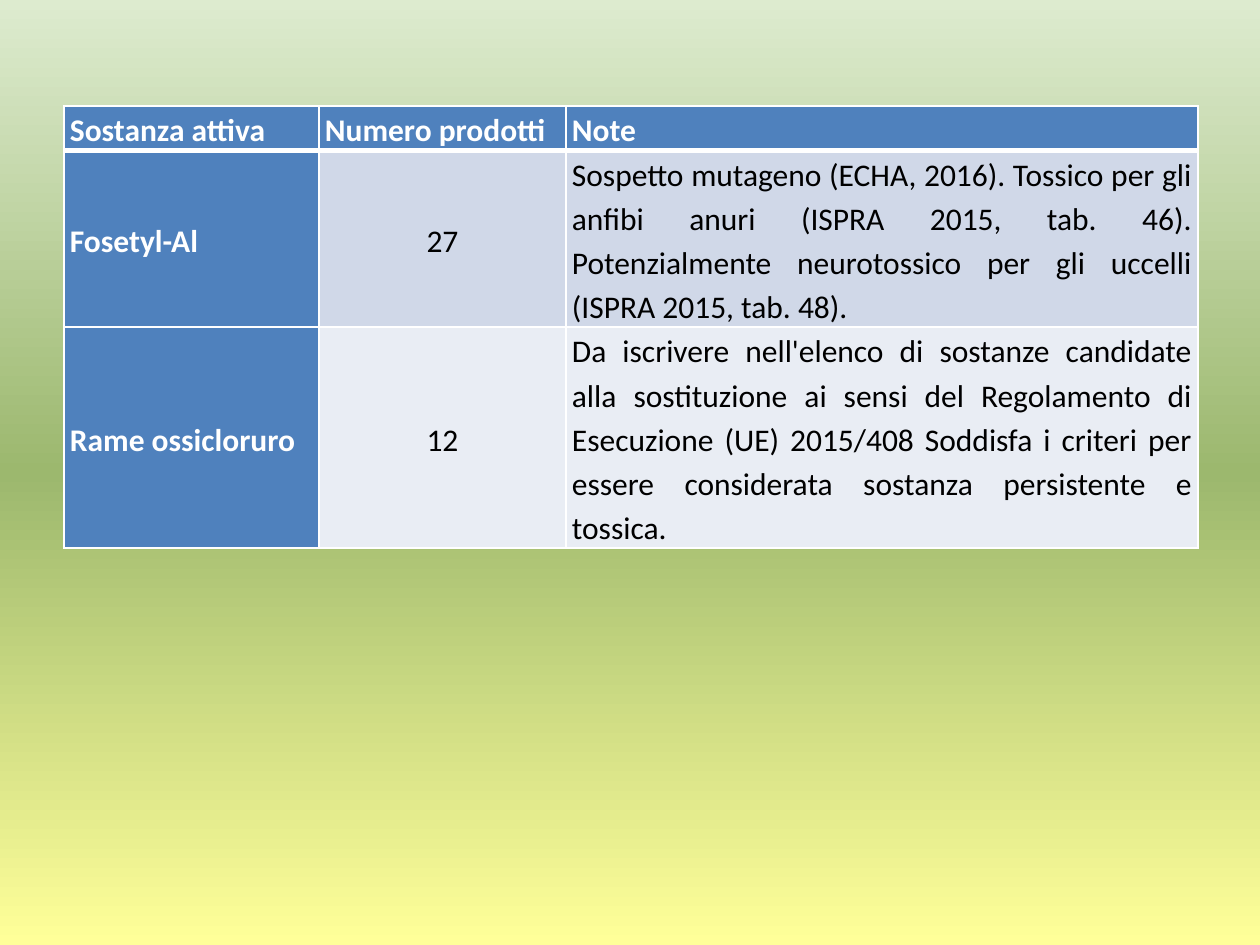
from copy import deepcopy

from lxml.etree import SubElement
from pptx import Presentation
from pptx.dml.color import RGBColor
from pptx.enum.text import MSO_ANCHOR as Anchor, PP_ALIGN as Align
from pptx.oxml.ns import qn
from pptx.util import Emu, Pt

PX = 914400 / 126
WHITE = RGBColor(0xFF, 0xFF, 0xFF)
BLACK = RGBColor(0x00, 0x00, 0x00)
BLUE = RGBColor(0x4F, 0x81, 0xBD)
BANDS = [RGBColor(0xD0, 0xD8, 0xE8), RGBColor(0xE9, 0xED, 0xF4)]
PALE_GREEN = RGBColor(0xDD, 0xEB, 0xCF)
GREEN = RGBColor(0x9C, 0xB8, 0x6E)
YELLOW = RGBColor(0xFF, 0xFF, 0x99)

COLUMN_WIDTHS = [255, 247, 632]
ROW_HEIGHTS = [43, 174, 217]
SUBSTANCES = [
    ["Sostanza attiva", "Numero prodotti", "Note"],
    ["Fosetyl-Al", "27",
     "Sospetto mutageno (ECHA, 2016). Tossico per gli anfibi anuri "
     "(ISPRA 2015, tab. 46). Potenzialmente neurotossico per gli uccelli "
     "(ISPRA 2015, tab. 48)."],
    ["Rame ossicloruro", "12",
     "Da iscrivere nell'elenco di sostanze candidate alla sostituzione ai "
     "sensi del Regolamento di Esecuzione (UE) 2015/408 Soddisfa i criteri "
     "per essere considerata sostanza persistente e tossica."],
]


def px(length):
    return Emu(round(length * PX))


def write(frame, text, size=18, color=BLACK, bold=False, align=Align.JUSTIFY):
    paragraph = frame.paragraphs[0]
    paragraph.alignment = align
    paragraph.line_spacing = 1.15
    run = paragraph.add_run()
    run.text = text
    run.font.name = "Calibri"
    run.font.size = Pt(size)
    run.font.bold = bold
    run.font.color.rgb = color


def set_borders(cell, bottom_width):
    """Draw white cell borders; they must precede the fill in the XML."""
    properties = cell._tc.get_or_add_tcPr()
    for side, width in [("L", 1), ("R", 1), ("T", 1), ("B", bottom_width)]:
        line = SubElement(properties, qn(f"a:ln{side}"), w=str(Pt(width)))
        solid = SubElement(line, qn("a:solidFill"))
        SubElement(solid, qn("a:srgbClr"), val=str(WHITE))


def paint_background(slide):
    fill = slide.background.fill
    fill.gradient()
    fill.gradient_angle = 270  # counter-clockwise: top to bottom
    stop_list = slide.element.find(".//" + qn("a:gsLst"))
    stop_list.insert(1, deepcopy(stop_list[0]))
    colors = [PALE_GREEN, GREEN, YELLOW]
    for stop, position, color in zip(fill.gradient_stops, [0, 0.5, 1], colors):
        stop.position = position
        stop.color.rgb = color


def add_substance_table(slide, left, top, widths, heights):
    table = slide.shapes.add_table(
        len(heights), len(widths), px(left), px(top),
        px(sum(widths)), px(sum(heights))).table
    table.first_col = True
    for column, width in zip(table.columns, widths):
        column.width = px(width)
    for row, height in zip(table.rows, heights):
        row.height = px(height)

    for r, texts in enumerate(SUBSTANCES):
        for c, text in enumerate(texts):
            cell = table.cell(r, c)
            heading = r == 0 or c == 0
            cell.vertical_anchor = Anchor.MIDDLE
            cell.margin_left = cell.margin_right = px(6)
            cell.margin_top = cell.margin_bottom = 0
            set_borders(cell, bottom_width=3 if r == 0 else 1)
            cell.fill.solid()
            cell.fill.fore_color.rgb = BLUE if heading else BANDS[r - 1]
            write(cell.text_frame, text, bold=heading,
                  color=WHITE if heading else BLACK,
                  align=Align.CENTER if r and c == 1 else Align.JUSTIFY)


def main():
    deck = Presentation()
    deck.slide_width, deck.slide_height = px(1260), px(945)
    slide = deck.slides.add_slide(deck.slide_layouts[6])
    paint_background(slide)
    add_substance_table(slide, 64, 106, COLUMN_WIDTHS, ROW_HEIGHTS)
    deck.save("out.pptx")


if __name__ == "__main__":
    main()
